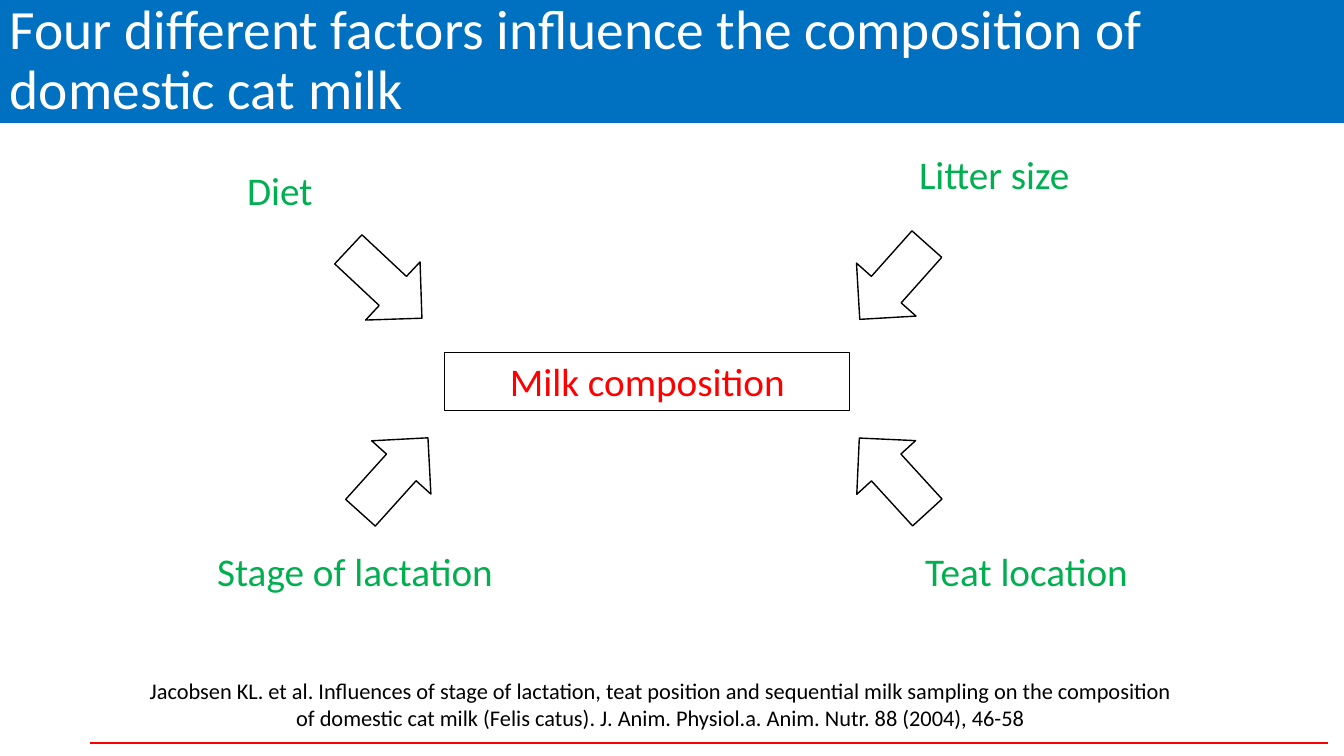
"""Build a slide on the factors that influence cat milk composition."""
from lxml.etree import SubElement
from pptx import Presentation
from pptx.dml.color import RGBColor
from pptx.enum.shapes import MSO_CONNECTOR, MSO_SHAPE
from pptx.enum.text import MSO_ANCHOR, PP_ALIGN
from pptx.oxml.ns import qn
from pptx.util import Inches, Pt

WIDTH, HEIGHT = 13.33, 7.5
FONT = "Calibri"
COLORS = {"banner": "0070C0", "white": "FFFFFF", "black": "000000",
          "red": "FF0000", "factor": "00B050"}

TITLE = "Four different factors influence the composition of domestic cat milk"
RESULT = "Milk composition"
CITATION = ("Jacobsen KL. et al. Influences of stage of lactation, teat position and "
            "sequential milk sampling on the composition of domestic cat milk "
            "(Felis catus). J. Anim. Physiol.a. Anim. Nutr. 88 (2004), 46-58")

LABEL_HEIGHT = 0.57
ARROW_SIZE = (1, 0.79)
FACTORS = [
    {"name": "Diet", "label": (1.87, 1.6, 1.81), "arrow": (3.32, 2.42), "angle": 43.1},
    {"name": "Stage of lactation", "label": (1.58, 5.38, 3.88), "arrow": (3.41, 4.32), "angle": 312},
    {"name": "Litter size", "label": (7.92, 1.44, 3.88), "arrow": (8.36, 2.4), "angle": 131.7},
    {"name": "Teat location", "label": (8.24, 5.38, 3.88), "arrow": (8.36, 4.32), "angle": 227.6},
]


def color(name):
    return RGBColor.from_string(COLORS[name])


def add_box(slide, box, kind=MSO_SHAPE.RECTANGLE, fill=None, line=None, weight=1):
    shape = slide.shapes.add_shape(kind, *map(Inches, box))
    shape.shadow.inherit = False
    if fill:
        shape.fill.solid()
        shape.fill.fore_color.rgb = color(fill)
    else:
        shape.fill.background()
    if line:
        shape.line.color.rgb = color(line)
        shape.line.width = Pt(weight)
    else:
        shape.line.fill.background()
    return shape


def write(shape, text, size=28, ink="black", align=PP_ALIGN.CENTER,
          anchor=MSO_ANCHOR.TOP, spacing=1.0):
    frame = shape.text_frame
    frame.word_wrap = True
    frame.vertical_anchor = anchor
    paragraph = frame.paragraphs[0]
    paragraph.alignment = align
    paragraph.line_spacing = spacing
    run = paragraph.add_run()
    run.text = text
    run.font.size = Pt(size)
    run.font.name = FONT
    run.font.color.rgb = color(ink)


def add_label(slide, box, text, **text_format):
    write(slide.shapes.add_textbox(*map(Inches, box)), text, **text_format)


def add_rule(slide, left, right, top):
    rule = slide.shapes.add_connector(
        MSO_CONNECTOR.STRAIGHT, *map(Inches, (left, top, right, top)))
    rule.line.color.rgb = color("red")
    rule.line.width = Pt(1)
    SubElement(rule._element.spPr, qn("a:effectLst"))


def main():
    presentation = Presentation()
    presentation.slide_width = Inches(WIDTH)
    presentation.slide_height = Inches(HEIGHT)
    slide = presentation.slides.add_slide(presentation.slide_layouts[6])

    add_rule(slide, 0.89, 13.17, 7.37)
    banner = add_box(slide, (0, 0, WIDTH, 1.22), fill="banner")
    write(banner, TITLE, size=39.6, ink="white", align=PP_ALIGN.LEFT,
          anchor=MSO_ANCHOR.MIDDLE, spacing=0.9)
    add_label(slide, (1.34, 6.67, 10.42, 0.64), CITATION, size=16)
    result = add_box(slide, (4.41, 3.5, 4.02, LABEL_HEIGHT), line="black", weight=0.75)
    write(result, RESULT, ink="red")

    for factor in FACTORS:
        arrow = add_box(slide, factor["arrow"] + ARROW_SIZE, MSO_SHAPE.RIGHT_ARROW,
                        fill="white", line="black")
        arrow.rotation = factor["angle"]
        add_label(slide, factor["label"] + (LABEL_HEIGHT,), factor["name"], ink="factor")

    presentation.save("out.pptx")


if __name__ == "__main__":
    main()
